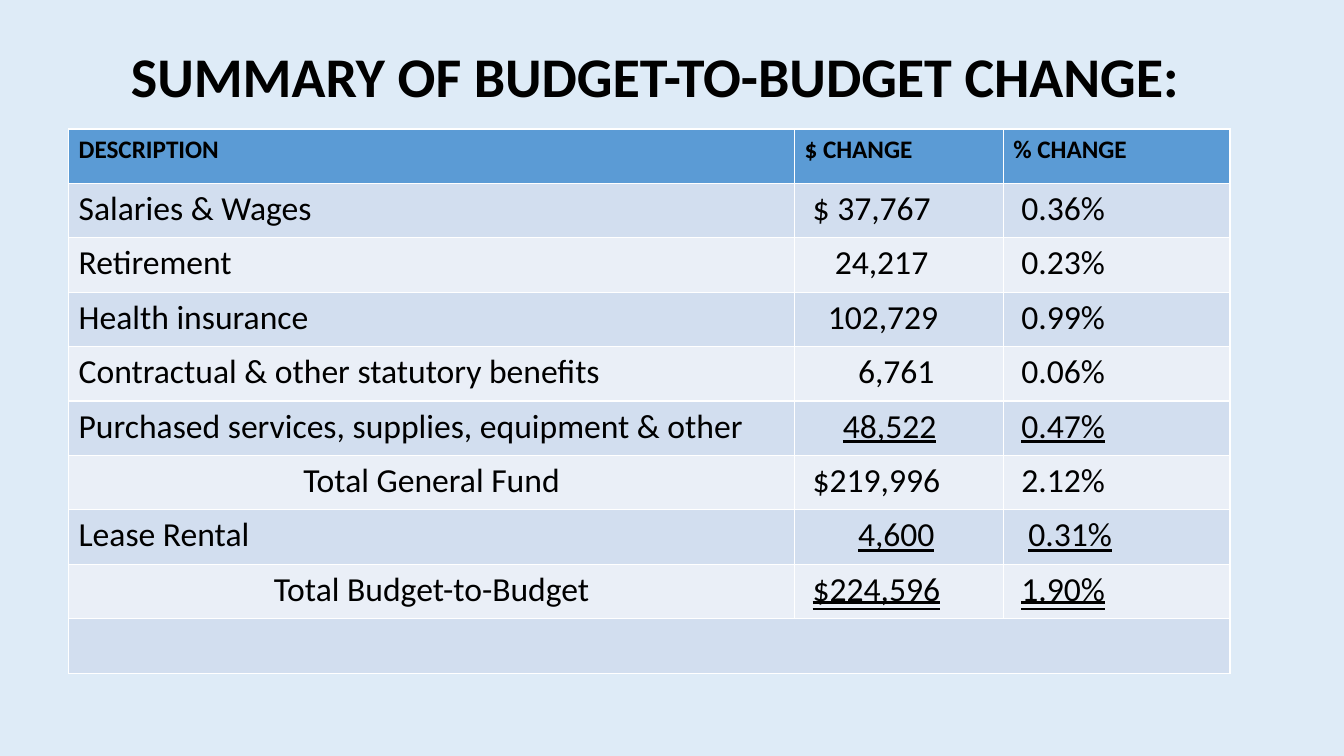
"""Build the budget-to-budget change summary slide."""
from lxml.etree import SubElement
from pptx import Presentation
from pptx.dml.color import RGBColor
from pptx.enum.text import MSO_ANCHOR, MSO_UNDERLINE as UNDERLINE, PP_ALIGN
from pptx.oxml.ns import qn
from pptx.util import Inches, Pt

BACKGROUND = RGBColor(0xDE, 0xEB, 0xF7)
HEADER_FILL = RGBColor(0x5B, 0x9B, 0xD5)
BAND_FILLS = [RGBColor(0xEA, 0xEF, 0xF7), RGBColor(0xD2, 0xDE, 0xEF)]
BLACK = RGBColor(0, 0, 0)
SINGLE, DOUBLE = UNDERLINE.SINGLE_LINE, UNDERLINE.DOUBLE_LINE
COLUMN_WIDTHS = [7.2, 2.07, 2.25]
ROW_HEIGHT = 0.54

HEADINGS = ["DESCRIPTION", "$ CHANGE", "% CHANGE"]
BUDGET_LINES = [
    ("Salaries & Wages", "$ 37,767", 0.08, "0.36%", 0.08, None),
    ("Retirement", "24,217", 0.3, "0.23%", 0.08, None),
    ("Health insurance", "102,729", 0.23, "0.99%", 0.08, None),
    ("Contractual & other statutory benefits", "6,761", 0.53, "0.06%", 0.08, None),
    ("Purchased services, supplies, equipment & other",
     "48,522", 0.38, "0.47%", 0.08, SINGLE),
    ("Total General Fund", "$219,996", 0.08, "2.12%", 0.08, None),
    ("Lease Rental", "4,600", 0.53, "0.31%\t", 0.15, SINGLE),
    ("Total Budget-to-Budget", "$224,596", 0.08, "1.90%", 0.08, DOUBLE),
]


def style_text(paragraph, size, bold=False):
    font = paragraph.font
    font.name, font.size, font.bold = "Calibri", Pt(size), bold
    font.color.rgb = BLACK


def write_amount(cell, amount, indent, underline):
    paragraph = cell.text_frame.paragraphs[0]
    properties = paragraph._p.get_or_add_pPr()
    if underline == SINGLE:
        amount = "\t" + amount
        tab_list = SubElement(properties, qn("a:tabLst"))
        for position in (indent, 1.13):
            SubElement(tab_list, qn("a:tab"), pos=str(Inches(position)), algn="l")
    else:
        properties.set("marL", str(Inches(indent)))
    paragraph.add_run().text = amount
    style_text(paragraph, 24)
    paragraph.font.underline = underline


presentation = Presentation()
presentation.slide_width, presentation.slide_height = Inches(13.33), Inches(7.5)
slide = presentation.slides.add_slide(presentation.slide_layouts[6])
slide.background.fill.solid()
slide.background.fill.fore_color.rgb = BACKGROUND

title = slide.shapes.add_textbox(Inches(1.2), Inches(0.31), Inches(11), Inches(0.96))
title.text_frame.word_wrap = True
title.text_frame.vertical_anchor = MSO_ANCHOR.MIDDLE
title_paragraph = title.text_frame.paragraphs[0]
title_paragraph.text = "SUMMARY OF BUDGET-TO-BUDGET CHANGE:"
title_paragraph.line_spacing = 0.9
style_text(title_paragraph, 40, bold=True)

row_count = len(BUDGET_LINES) + 2
table = slide.shapes.add_table(
    row_count, len(HEADINGS), Inches(0.68), Inches(1.28),
    Inches(sum(COLUMN_WIDTHS)), Inches(ROW_HEIGHT * row_count)).table
for column, width in zip(table.columns, COLUMN_WIDTHS):
    column.width = Inches(width)
for row_index, row in enumerate(table.rows):
    row.height = Inches(ROW_HEIGHT)
    for cell in row.cells:
        cell.fill.solid()
        cell.fill.fore_color.rgb = BAND_FILLS[row_index % 2] if row_index else HEADER_FILL

for cell, heading in zip(table.rows[0].cells, HEADINGS):
    cell.text = heading
    style_text(cell.text_frame.paragraphs[0], 18, bold=True)

for row_index, budget_line in enumerate(BUDGET_LINES, start=1):
    description, dollars, dollar_indent, percent, percent_indent, underline = budget_line
    description_cell = table.cell(row_index, 0)
    description_cell.text = description
    paragraph = description_cell.text_frame.paragraphs[0]
    style_text(paragraph, 24)
    if description.startswith("Total"):
        paragraph.alignment = PP_ALIGN.CENTER
    write_amount(table.cell(row_index, 1), dollars, dollar_indent, underline)
    write_amount(table.cell(row_index, 2), percent, percent_indent, underline)

table.cell(row_count - 1, 0).merge(table.cell(row_count - 1, len(HEADINGS) - 1))

presentation.save("out.pptx")
